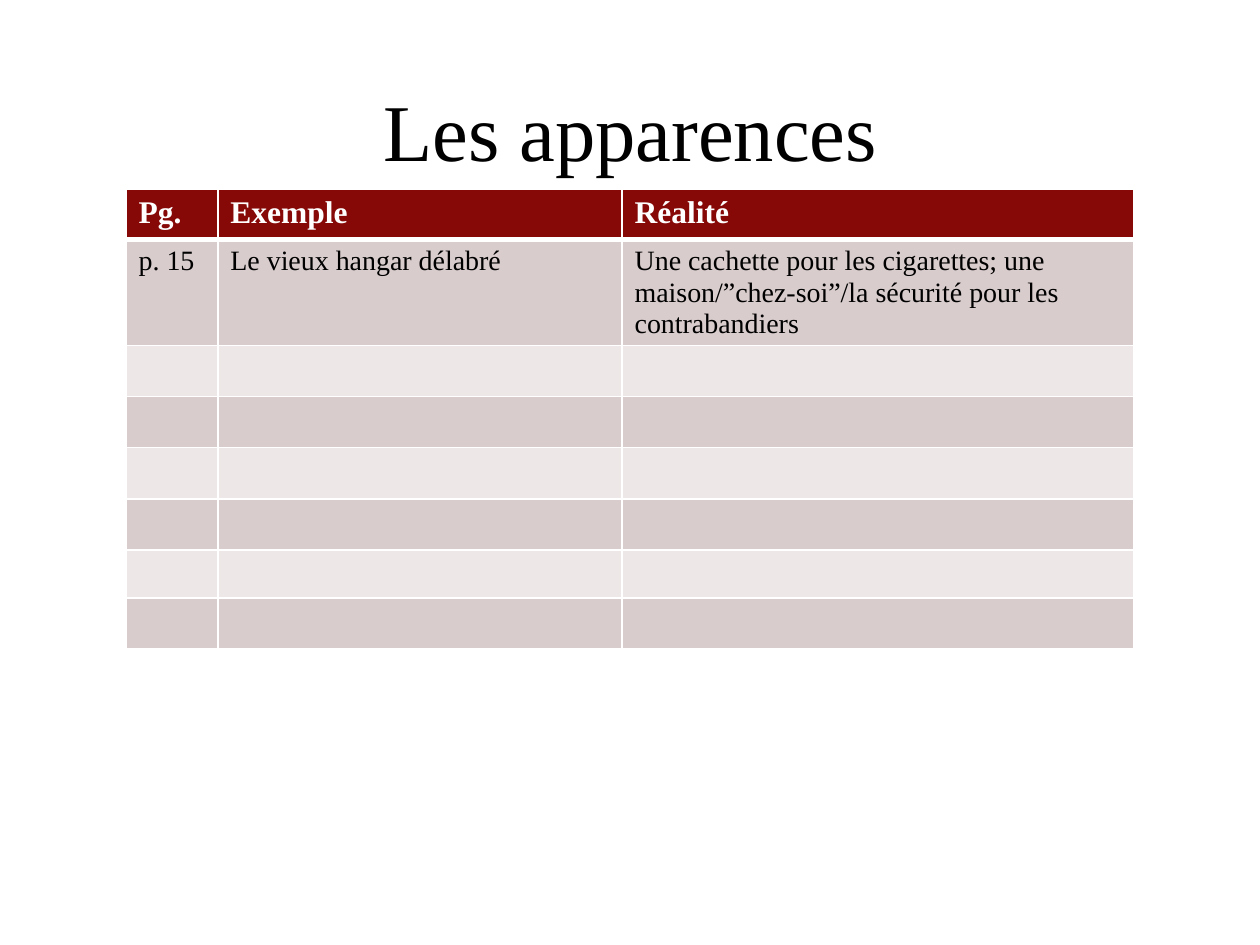
from dataclasses import dataclass

from lxml.etree import SubElement
from pptx import Presentation
from pptx.dml.color import RGBColor as Color
from pptx.enum.text import MSO_ANCHOR as Anchor, PP_ALIGN as Align
from pptx.oxml.ns import qn
from pptx.util import Cm, Pt


@dataclass(frozen=True)
class Theme:
    font: str = "Times New Roman"
    text: str = "000000"
    white: str = "FFFFFF"
    header: str = "860908"
    bands: tuple = ("D9CCCC", "EDE7E7")
    title_size: int = 46
    header_size: int = 18
    body_size: int = 16
    border: int = 1
    header_border: int = 3


class SlideBuilder:
    def __init__(self, deck, theme):
        self.theme = theme
        self.page = deck.slides.add_slide(deck.slide_layouts[5])
        fill = self.page.background.fill
        fill.solid()
        fill.fore_color.rgb = Color.from_string(theme.white)

    def add_span(self, para, text, size, color, bold=False):
        span = para.add_run()
        span.text = text
        span.font.name = self.theme.font
        span.font.size = Pt(size)
        span.font.bold = bold
        span.font.color.rgb = Color.from_string(color)

    def title(self, text, left, top, width, height):
        box = self.page.shapes.title
        box.left, box.top, box.width, box.height = map(Cm, (left, top, width, height))
        frame = box.text_frame
        frame.word_wrap = True
        frame.vertical_anchor = Anchor.MIDDLE
        para = frame.paragraphs[0]
        para.alignment = Align.CENTER
        self.add_span(para, text, self.theme.title_size, self.theme.text)

    def table(self, rows, left, top, widths, heights):
        """Draw a table whose first row is the header; empty strings leave blank cells."""
        frame = self.page.shapes.add_table(
            len(rows), len(widths), Cm(left), Cm(top), Cm(sum(widths)), Cm(sum(heights)))
        grid = frame.table
        for column, width in zip(grid.columns, widths):
            column.width = Cm(width)
        for index, (row, height) in enumerate(zip(rows, heights)):
            grid.rows[index].height = Cm(height)
            for cell, text in zip(grid.rows[index].cells, row):
                self.fill_cell(cell, text, index)

    def fill_cell(self, cell, text, row):
        theme = self.theme
        is_header = row == 0
        cell.fill.solid()
        cell.fill.fore_color.rgb = Color.from_string(
            theme.header if is_header else theme.bands[(row - 1) % 2])
        self.cell_borders(cell, row)
        para = cell.text_frame.paragraphs[0]
        if not text:
            # An empty cell takes its line height from the end-of-paragraph mark.
            end = SubElement(para._p, qn("a:endParaRPr"), sz=str(theme.body_size * 100))
            SubElement(end, qn("a:latin"), typeface=theme.font)
        elif is_header:
            self.add_span(para, text, theme.header_size, theme.white, bold=True)
        else:
            self.add_span(para, text, theme.body_size, theme.text)

    def cell_borders(self, cell, row):
        """Put white lines on all sides, thicker between the header and the body."""
        theme = self.theme
        thin, thick = theme.border, theme.header_border
        sides = {"lnL": thin, "lnR": thin,
                 "lnT": thick if row == 1 else thin,
                 "lnB": thick if row == 0 else thin}
        properties = cell._tc.get_or_add_tcPr()
        for position, (side, points) in enumerate(sides.items()):
            line = SubElement(properties, qn(f"a:{side}"), w=str(Pt(points)))
            SubElement(SubElement(line, qn("a:solidFill")), qn("a:srgbClr"), val=theme.white)
            properties.insert(position, line)


def main():
    deck = Presentation()
    deck.slide_width, deck.slide_height = Cm(25.4), Cm(19.05)
    slide = SlideBuilder(deck, Theme())
    slide.title("Les apparences", 2.54, 1.4, 20.32, 2.41)
    rows = [
        ("Pg.", "Exemple", "Réalité"),
        ("p. 15", "Le vieux hangar délabré",
         "Une cachette pour les cigarettes; une maison/”chez-soi”/la sécurité "
         "pour les contrabandiers"),
    ] + [("", "", "")] * 6
    slide.table(rows, 2.54, 3.81, widths=(1.85, 8.15, 10.32),
                heights=(1.02, 2.13) + (1.03,) * 4 + (0.97, 1.03))
    deck.save("out.pptx")


if __name__ == "__main__":
    main()
